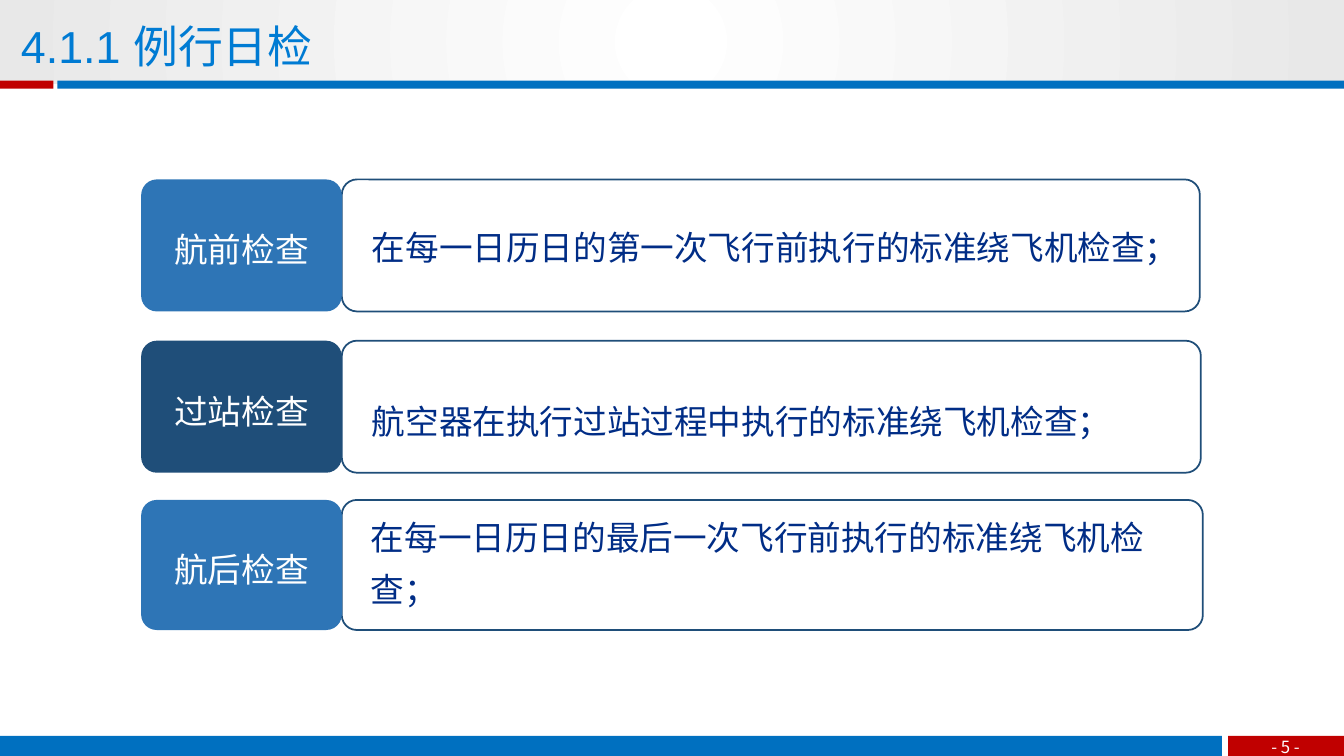
from dataclasses import dataclass
from typing import Optional

from lxml import etree
from pptx import Presentation
from pptx.dml.color import RGBColor
from pptx.enum.shapes import MSO_SHAPE
from pptx.enum.text import MSO_ANCHOR, PP_ALIGN
from pptx.oxml import parse_xml
from pptx.oxml.ns import nsdecls, qn
from pptx.util import Pt

RECTANGLE = MSO_SHAPE.RECTANGLE
ROUNDED = MSO_SHAPE.ROUNDED_RECTANGLE
TOP, MIDDLE = MSO_ANCHOR.TOP, MSO_ANCHOR.MIDDLE
LEFT, CENTER = PP_ALIGN.LEFT, PP_ALIGN.CENTER

EMU_PER_PX = 9144
SLIDE_WIDTH, SLIDE_HEIGHT = 1333, 750
SANS, CHINESE = "Arial", "Noto Sans CJK SC"
BLUE, RED, WHITE = "0070C0", "C00000", "FFFFFF"
LABEL_BLUE, DARK_BLUE = "2E75B6", "1F4E79"
TITLE_BLUE, BODY_BLUE = "007BD3", "012D86"
LABEL_LEFT, LABEL_WIDTH = 140, 199
CARD_LEFT = LABEL_LEFT + LABEL_WIDTH
HEADER_GRADIENT = (
    f'<a:gradFill {nsdecls("a")} rotWithShape="1"><a:gsLst>'
    '<a:gs pos="0"><a:srgbClr val="FFFFFF"/></a:gs>'
    '<a:gs pos="100000"><a:srgbClr val="E8E8E8"/></a:gs></a:gsLst>'
    '<a:path path="circle"><a:fillToRect l="50000" t="50000" r="50000" b="50000"/>'
    "</a:path></a:gradFill>"
)


@dataclass(frozen=True)
class Box:
    """A rectangle in px."""

    left: int
    top: int
    width: int
    height: int


@dataclass(frozen=True)
class TextStyle:
    """The look of one paragraph and its frame."""

    size: int
    font: str
    color: str
    align: PP_ALIGN = LEFT
    anchor: MSO_ANCHOR = TOP
    spacing: float = 1.0
    wrap: bool = True
    side_inset: int = 10


@dataclass(frozen=True)
class Check:
    """One inspection: a coloured label, an outlined card and its text."""

    label: str
    color: str
    top: int
    height: int
    card_width: int
    description: str
    text_box: Box
    wrap: bool = False


TITLE_STYLE = TextStyle(32, SANS, TITLE_BLUE)
NUMBER_STYLE = TextStyle(12, CHINESE, WHITE, CENTER, MIDDLE, wrap=False)
LABEL_STYLE = TextStyle(24, SANS, WHITE, CENTER, MIDDLE, 1.2, side_inset=9)

BARS = [
    (Box(57, 80, 1277, 8), BLUE),
    (Box(0, 80, 53, 8), RED),
    (Box(0, 730, 1212, 20), BLUE),
    (Box(1218, 730, 115, 20), RED),
]
CHECKS = [
    Check("航前检查", LABEL_BLUE, 178, 131, 851,
          "在每一日历日的第一次飞行前执行的标准绕飞机检查；", Box(359, 208, 820, 115)),
    Check("过站检查", DARK_BLUE, 338, 131, 852,
          "航空器在执行过站过程中执行的标准绕飞机检查；", Box(359, 381, 753, 115)),
    Check("航后检查", LABEL_BLUE, 496, 129, 854,
          "在每一日历日的最后一次飞行前执行的标准绕飞机检查；", Box(358, 496, 814, 167), True),
]


def px(length: int) -> int:
    """Turn px into EMU."""
    return length * EMU_PER_PX


def rgb(value: str) -> RGBColor:
    """Turn a hex string into a colour."""
    return RGBColor.from_string(value)


def place(box: Box) -> tuple:
    """Give a box's position and size in EMU."""
    return px(box.left), px(box.top), px(box.width), px(box.height)


def add_block(slide, kind: MSO_SHAPE, box: Box, fill: Optional[str] = None,
              outline: Optional[str] = None, corner: Optional[float] = None):
    """Add a preset shape with an optional fill, outline and corner radius."""
    shape = slide.shapes.add_shape(kind, *place(box))
    shape.shadow.inherit = False
    if fill:
        shape.fill.solid()
        shape.fill.fore_color.rgb = rgb(fill)
    else:
        shape.fill.background()
    if outline:
        shape.line.color.rgb = rgb(outline)
        shape.line.width = Pt(1.25)
    else:
        shape.line.fill.background()
    if corner is not None:
        shape.adjustments[0] = corner
    return shape


def write(shape, text: str, style: TextStyle) -> None:
    """Write one styled paragraph into a shape."""
    frame = shape.text_frame
    paragraph = frame.paragraphs[0]
    run = paragraph.add_run()
    run.text = text
    inset = px(style.side_inset)
    formats = {
        frame: {"word_wrap": style.wrap, "vertical_anchor": style.anchor,
                "margin_left": inset, "margin_right": inset,
                "margin_top": px(5), "margin_bottom": px(5)},
        paragraph: {"alignment": style.align, "line_spacing": style.spacing},
        run.font: {"size": Pt(style.size), "name": style.font},
    }
    for target, values in formats.items():
        for name, value in values.items():
            setattr(target, name, value)
    run.font.color.rgb = rgb(style.color)
    east_asian = etree.Element(qn("a:ea"), typeface=CHINESE)
    run.font._element.find(qn("a:latin")).addnext(east_asian)


def add_text(slide, box: Box, text: str, style: TextStyle) -> None:
    """Add a text box."""
    write(slide.shapes.add_textbox(*place(box)), text, style)


def add_frame(slide) -> None:
    """Add the header band, the bars and the page number."""
    header = add_block(slide, RECTANGLE, Box(-2, 0, 1335, 83))
    properties = header._element.spPr
    properties.replace(properties.find(qn("a:noFill")), parse_xml(HEADER_GRADIENT))
    for box, color in BARS:
        add_block(slide, RECTANGLE, box, fill=color)
    add_text(slide, Box(1236, 726, 78, 30), "- 5 -", NUMBER_STYLE)


def add_check(slide, check: Check) -> None:
    """Add one inspection row."""
    card = Box(CARD_LEFT, check.top, check.card_width, check.height)
    label = Box(LABEL_LEFT, check.top, LABEL_WIDTH, check.height)
    add_block(slide, ROUNDED, card, outline=DARK_BLUE, corner=0.115)
    label_shape = add_block(slide, ROUNDED, label, fill=check.color, corner=0.119)
    write(label_shape, check.label, LABEL_STYLE)
    style = TextStyle(24, CHINESE, BODY_BLUE, spacing=1.3, wrap=check.wrap)
    add_text(slide, check.text_box, check.description, style)


def main() -> None:
    """Build and save the slide."""
    presentation = Presentation()
    presentation.slide_width = px(SLIDE_WIDTH)
    presentation.slide_height = px(SLIDE_HEIGHT)
    slide = presentation.slides.add_slide(presentation.slide_layouts[6])
    add_frame(slide)
    add_text(slide, Box(11, 14, 688, 64), "4.1.1 例行日检", TITLE_STYLE)
    for check in CHECKS:
        add_check(slide, check)
    presentation.save("out.pptx")


if __name__ == "__main__":
    main()
